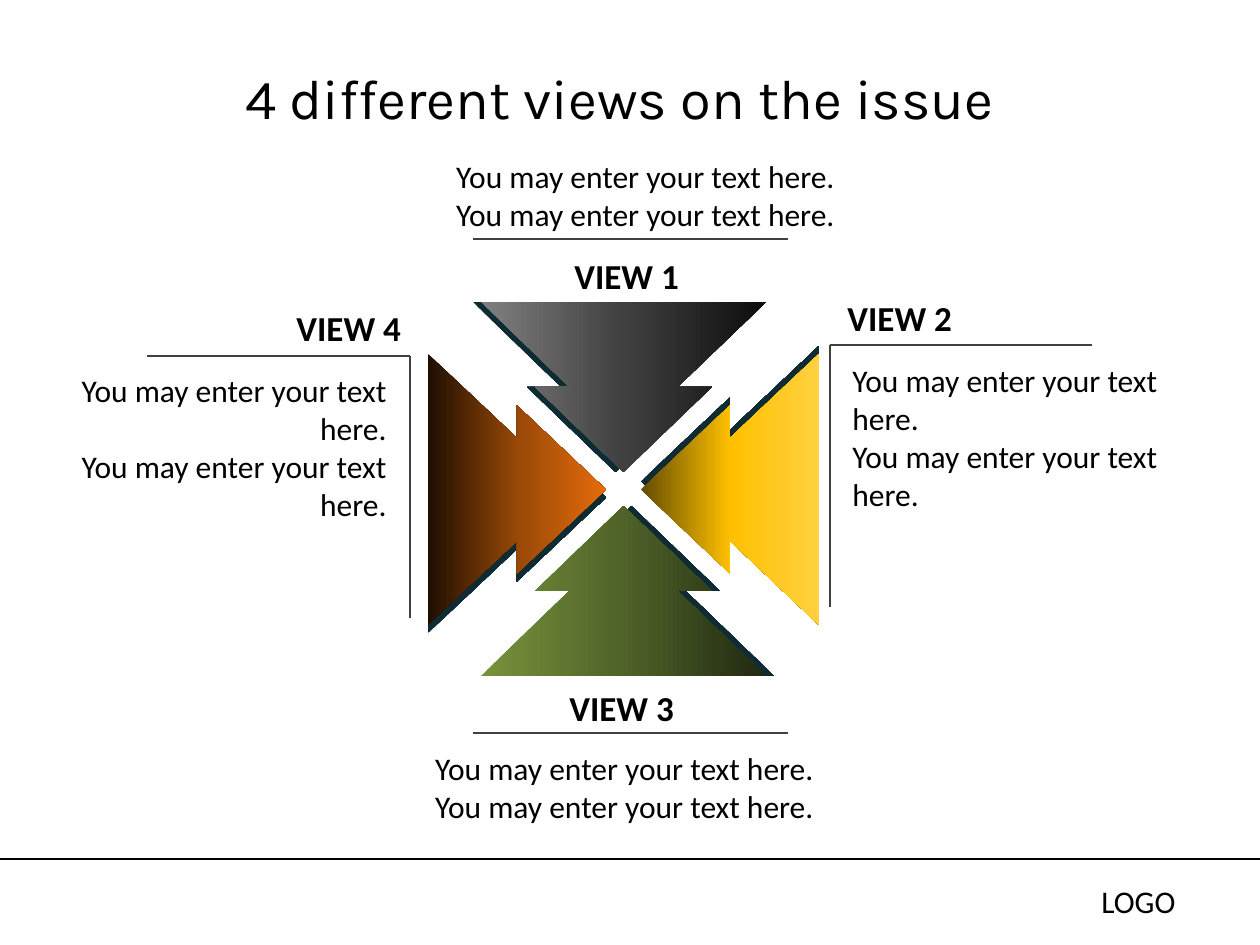
from lxml.etree import SubElement
from pptx import Presentation
from pptx.dml.color import RGBColor
from pptx.enum.shapes import MSO_CONNECTOR
from pptx.enum.text import MSO_ANCHOR, PP_ALIGN
from pptx.oxml import parse_xml
from pptx.oxml.ns import nsdecls, qn
from pptx.util import Pt

SCALE = 914400 / 126
BLACK = RGBColor(0x00, 0x00, 0x00)
GREY = RGBColor(0x40, 0x40, 0x40)
SHADE = RGBColor(0x0F, 0x2B, 0x33)
# Gradient stops, left to right
STEEL = (RGBColor(0x80, 0x80, 0x80), GREY, RGBColor(0x0D, 0x0D, 0x0D))
GOLD = (RGBColor(0x64, 0x4C, 0x00), RGBColor(0xFF, 0xC0, 0x00), RGBColor(0xFF, 0xD1, 0x3F))
GREEN = (RGBColor(0x77, 0x93, 0x3C), RGBColor(0x4F, 0x62, 0x28), RGBColor(0x21, 0x29, 0x11))
RUST = (RGBColor(0x1E, 0x0E, 0x01), RGBColor(0x98, 0x48, 0x07), RGBColor(0xE4, 0x6C, 0x0A))

# Tip at (1, 0.5), base along the left edge
ARROW = [(0, 0), (0.5, 0.31), (0.5, 0.19), (1, 0.5), (0.5, 0.81), (0.5, 0.69), (0, 1)]
# Turn of the arrow and direction of its shadow in degrees
TURNS = {
    "right": (lambda u, v: (u, v), 90),
    "left": (lambda u, v: (1 - u, v), 270),
    "down": (lambda u, v: (v, u), 180),
    "up": (lambda u, v: (v, 1 - u), 0),
}
LINE = "You may enter your text here."


def px(n):
    return int(n * SCALE)


def add_text(slide, box, lines, size=18, align=PP_ALIGN.LEFT, bold=False,
             font="Calibri", wrap=True):
    shape = slide.shapes.add_textbox(*map(px, box))
    frame = shape.text_frame
    frame.word_wrap = wrap
    frame.text = "\n".join(lines)
    for para in frame.paragraphs:
        para.alignment = align
        for run in para.runs:
            run.font.name = font
            run.font.size = Pt(size)
            run.font.bold = bold
            run.font.color.rgb = BLACK
    return frame


def add_rule(slide, x1, y1, x2, y2, color=GREY):
    rule = slide.shapes.add_connector(MSO_CONNECTOR.STRAIGHT, *map(px, (x1, y1, x2, y2)))
    rule.line.color.rgb = color
    rule.line.width = Pt(0.75)
    SubElement(rule._element.spPr, qn("a:effectLst"))


def add_arrow(slide, box, way, colors):
    """Double arrow with a left-to-right gradient and a hard shadow."""
    x, y, w, h = box
    turn, angle = TURNS[way]
    spots = [(px(x + u * w), px(y + v * h)) for u, v in (turn(*p) for p in ARROW)]
    pen = slide.shapes.build_freeform(*spots[0])
    pen.add_line_segments(spots[1:], close=True)
    shape = pen.convert_to_shape()
    shape.line.fill.background()
    stops = "".join(f'<a:gs pos="{i * 50000}"><a:srgbClr val="{c}"/></a:gs>'
                    for i, c in enumerate(colors))
    props = shape._element.spPr
    props.find(qn("a:custGeom")).addnext(parse_xml(
        f'<a:gradFill {nsdecls("a")} rotWithShape="1"><a:gsLst>{stops}</a:gsLst>'
        '<a:lin ang="0" scaled="0"/></a:gradFill>'))
    props.append(parse_xml(
        f'<a:effectLst {nsdecls("a")}><a:outerShdw dist="{px(8)}" dir="{angle * 60000}" '
        f'algn="ctr" rotWithShape="0"><a:srgbClr val="{SHADE}"/></a:outerShdw></a:effectLst>'))


def add_label(slide, x, y, name):
    add_text(slide, (x, y, 131, 55), [name], 20, bold=True, wrap=False)


def add_flat(slide, box, way, colors, name, label, rule, note):
    """View above or below the centre: arrow, label, rule and centred note."""
    x, y, w, h = box
    add_arrow(slide, box, way, colors)
    add_label(slide, x + label[0], y + label[1], name)
    add_rule(slide, x - 8, y + rule, x + 307, y + rule)
    left, top, wide = note
    add_text(slide, (x + left, y + top, wide, 90), [f"{LINE} {LINE}"], align=PP_ALIGN.CENTER)


def add_side(slide, box, way, colors, name, label, corner, reach, note, align):
    """View beside the centre: arrow, label, corner rules and note."""
    x, y, w, h = box
    add_arrow(slide, box, way, colors)
    add_label(slide, x + label[0], y + label[1], name)
    cx, cy = x + corner[0], y + corner[1]
    add_rule(slide, cx, cy, cx + reach, cy)
    add_rule(slide, cx, cy, cx, cy + 262)
    left, top, wide = note
    add_text(slide, (x + left, y + top, wide, 242), [LINE, LINE], align=align)


def add_title(slide, box):
    frame = add_text(slide, box, ["4 different views on the issue"], 32,
                     PP_ALIGN.CENTER, font="Karla")
    frame.vertical_anchor = MSO_ANCHOR.MIDDLE


def add_foot(slide, box):
    x, y, w, h = box
    add_rule(slide, x, y, x + w, y, BLACK)
    add_text(slide, (x + 1089, y + 17, 140, 50), ["LOGO"])


def main():
    deck = Presentation()
    deck.slide_width, deck.slide_height = px(1260), px(945)
    slide = deck.slides.add_slide(deck.slide_layouts[6])
    add_foot(slide, (0, 859, 1260, 86))
    add_side(slide, (641, 354, 178, 271), "left", GOLD, "VIEW 2",
             (194, -64), (189, -9), 262, (199, 1, 374), PP_ALIGN.LEFT)
    add_flat(slide, (481, 506, 285, 170), "up", GREEN, "VIEW 3",
             (76, 174), 227, (-72, 237, 431))
    add_flat(slide, (481, 302, 285, 170), "down", STEEL, "VIEW 1",
             (81, -54), -63, (-40, -151, 409))
    add_side(slide, (428, 354, 178, 271), "right", RUST, "VIEW 4",
             (-144, -54), (-18, 2), -263, (-428, 11, 399), PP_ALIGN.RIGHT)
    add_title(slide, (53, 45, 1134, 105))
    deck.save("out.pptx")


if __name__ == "__main__":
    main()
